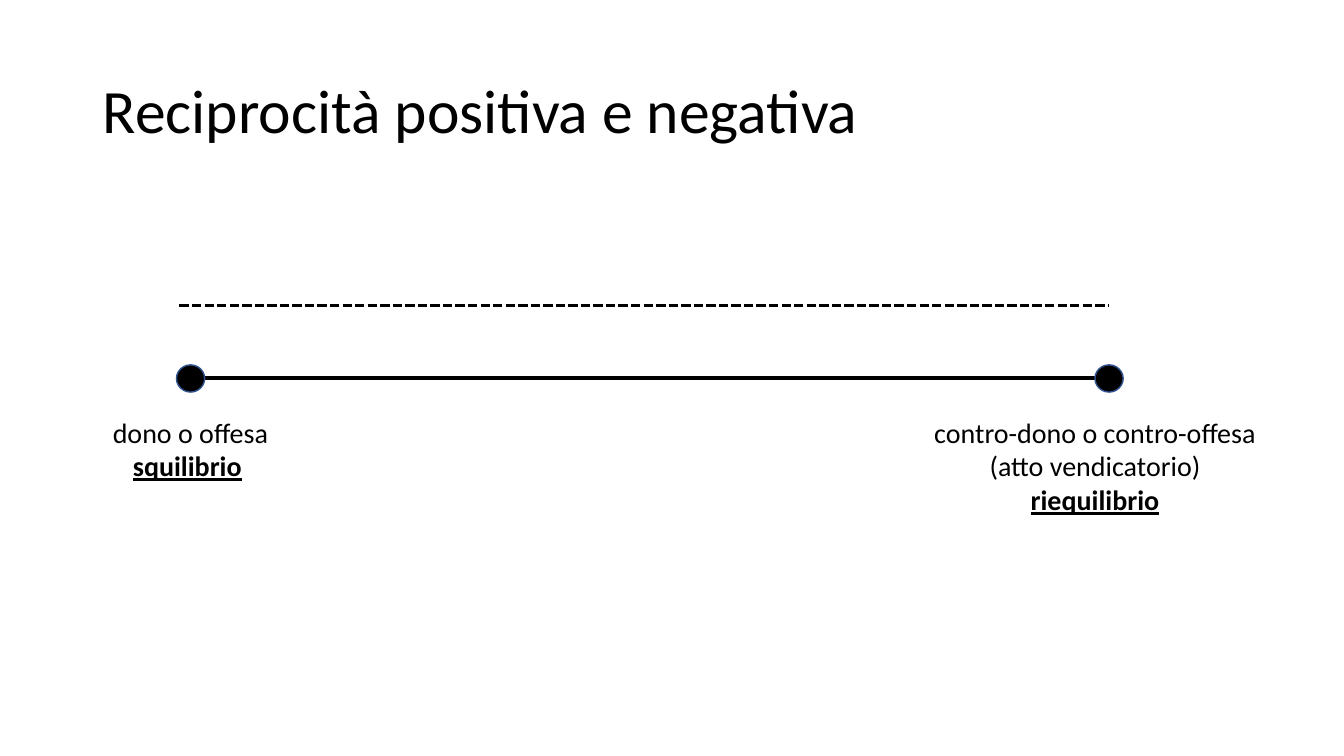
from pptx import Presentation
from pptx.dml.color import RGBColor
from pptx.enum.dml import MSO_LINE
from pptx.enum.shapes import MSO_CONNECTOR, MSO_SHAPE
from pptx.enum.text import MSO_ANCHOR, MSO_AUTO_SIZE, PP_ALIGN
from pptx.oxml.ns import qn
from pptx.util import Inches, Pt
from lxml import etree

STRAIGHT, OVAL = MSO_CONNECTOR.STRAIGHT, MSO_SHAPE.OVAL
DASH, SOLID = MSO_LINE.SQUARE_DOT, MSO_LINE.SOLID
LEFT, CENTER = PP_ALIGN.LEFT, PP_ALIGN.CENTER
MIDDLE = MSO_ANCHOR.MIDDLE
FIT, NO_FIT = MSO_AUTO_SIZE.SHAPE_TO_FIT_TEXT, MSO_AUTO_SIZE.NONE

BLACK = RGBColor(0x00, 0x00, 0x00)
BLUE = RGBColor(0x32, 0x54, 0x91)
FONT = "Calibri"

TITLE = "Reciprocità positiva e negativa"
LINE_START, LINE_END = 1.78, 11
LINES = [(3.75, 2.75, SOLID), (3.03, 2.25, DASH)]
DOT_W, DOT_H, DOT_TOP = 0.28, 0.27, 3.62
DOT_LEFTS = [1.75, 10.86]
LABEL_TOP = 4.07
LABELS = [
    (1.01, 1.76, 0.77, [[("dono o offesa", False)],
                        [("squilibrio", True), (" ", False)]]),
    (9.15, 3.42, 1.11, [[("contro-dono o contro-offesa", False)],
                        [("(atto vendicatorio)", False)],
                        [("riequilibrio", True)]]),
]


def add_run(p, text, size, strong=False):
    """Add one run, bold and underlined when strong."""
    r = p.add_run()
    r.text = text
    r.font.name = FONT
    r.font.size = Pt(size)
    r.font.color.rgb = BLACK
    r.font.bold = r.font.underline = strong


def add_title(slide):
    """Place and fill the title."""
    sp = slide.shapes.title
    sp.left, sp.top = Inches(0.92), Inches(0.4)
    sp.width, sp.height = Inches(11.5), Inches(1.45)
    tf = sp.text_frame
    tf.auto_size = NO_FIT
    tf.vertical_anchor = MIDDLE
    p = tf.paragraphs[0]
    p.alignment = LEFT
    p.line_spacing = 0.9
    add_run(p, TITLE, 44)


def add_line(slide, y, width, dash):
    """Draw one horizontal line of the diagram."""
    line = slide.shapes.add_connector(
        STRAIGHT, Inches(LINE_START), Inches(y), Inches(LINE_END), Inches(y))
    line.line.color.rgb = BLACK
    line.line.width = Pt(width)
    line.line.dash_style = dash
    etree.SubElement(line._element.spPr, qn("a:effectLst"))


def add_dot(slide, left):
    """Draw one end point."""
    sp = slide.shapes.add_shape(
        OVAL, Inches(left), Inches(DOT_TOP), Inches(DOT_W), Inches(DOT_H))
    sp.shadow.inherit = False
    sp.fill.solid()
    sp.fill.fore_color.rgb = BLACK
    sp.line.color.rgb = BLUE
    sp.line.width = Pt(1)


def add_label(slide, left, width, height, rows):
    """Write the centred label of an end point."""
    sp = slide.shapes.add_textbox(
        Inches(left), Inches(LABEL_TOP), Inches(width), Inches(height))
    tf = sp.text_frame
    tf.word_wrap = False
    tf.auto_size = FIT
    for i, runs in enumerate(rows):
        p = tf.add_paragraph() if i else tf.paragraphs[0]
        p.alignment = CENTER
        for text, strong in runs:
            add_run(p, text, 20, strong)


def main():
    """Build the slide on reciprocity and save it."""
    prs = Presentation()
    prs.slide_width, prs.slide_height = Inches(13.33), Inches(7.5)
    slide = prs.slides.add_slide(prs.slide_layouts[5])
    add_title(slide)
    for y, width, dash in LINES:
        add_line(slide, y, width, dash)
    for left in DOT_LEFTS:
        add_dot(slide, left)
    for label in LABELS:
        add_label(slide, *label)
    prs.save("out.pptx")


if __name__ == "__main__":
    main()
